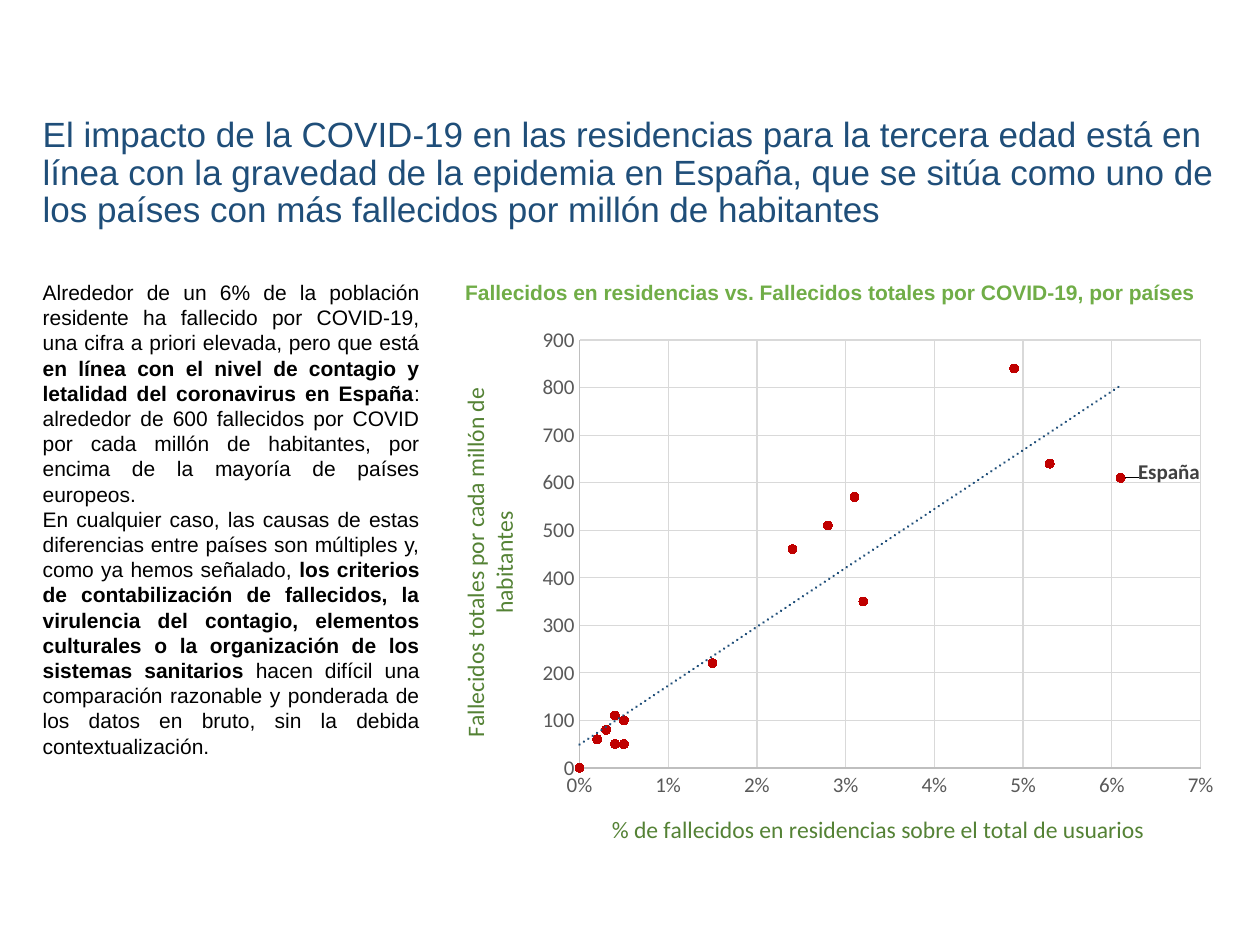
from dataclasses import dataclass

from lxml import etree
from pptx import Presentation
from pptx.chart.data import XyChartData
from pptx.dml.color import RGBColor
from pptx.enum.chart import XL_CHART_TYPE as ChartType
from pptx.enum.chart import XL_LABEL_POSITION as LabelPosition
from pptx.enum.chart import XL_MARKER_STYLE as MarkerStyle
from pptx.enum.chart import XL_TICK_MARK as TickMark
from pptx.enum.text import MSO_ANCHOR as Anchor
from pptx.enum.text import PP_ALIGN as Align
from pptx.oxml import parse_xml
from pptx.oxml.ns import nsdecls, qn
from pptx.util import Inches, Pt


@dataclass(frozen=True)
class Theme:
    navy: str = "1F4E79"
    black: str = "000000"
    heading_green: str = "70AD47"
    axis_green: str = "548235"
    tick_gray: str = "595959"
    label_gray: str = "404040"
    axis_line: str = "BFBFBF"
    grid_line: str = "D9D9D9"
    marker_red: str = "C00000"
    text_font: str = "Arial"
    chart_font: str = "Calibri"
    title_size: float = 20
    body_size: float = 12
    axis_title_size: float = 13.5


THEME = Theme()

HEADLINE = (
    "El impacto de la COVID-19 en las residencias para la tercera edad está en "
    "línea con la gravedad de la epidemia en España, que se sitúa como uno de "
    "los países con más fallecidos por millón de habitantes"
)
# Each paragraph is a list of (text, bold) runs
COMMENTARY = [
    [
        ("Alrededor de un 6% de la población residente ha fallecido por COVID-19, "
         "una cifra a priori elevada, pero que está ", False),
        ("en línea con el nivel de contagio y letalidad del coronavirus en España", True),
        (": alrededor de 600 fallecidos por COVID por cada millón de habitantes, "
         "por encima de la mayoría de países europeos.", False),
    ],
    [
        ("En cualquier caso, las causas de estas diferencias entre países son "
         "múltiples y, como ya hemos señalado, ", False),
        ("los criterios de contabilización de fallecidos, la virulencia del contagio, "
         "elementos culturales o la organización de los sistemas sanitarios ", True),
        ("hacen difícil una comparación razonable y ponderada de los datos en bruto, "
         "sin la debida contextualización.", False),
    ],
]
CHART_HEADING = "Fallecidos en residencias vs. Fallecidos totales por COVID-19, por países"
# (share of care-home users who died, total deaths per million)
COUNTRIES = [
    (0, 0), (0.002, 60), (0.003, 80), (0.004, 110), (0.004, 50),
    (0.005, 100), (0.005, 50), (0.015, 220), (0.024, 460), (0.028, 510),
    (0.031, 570), (0.032, 350), (0.049, 840), (0.053, 640), (0.061, 610),
]
SPAIN = len(COUNTRIES) - 1


def style_font(font, size, color, name, bold=False):
    for attribute, value in dict(size=Pt(size), name=name, bold=bold).items():
        setattr(font, attribute, value)
    font.color.rgb = RGBColor.from_string(color)


def style_line(line, color, width=0.75):
    line.color.rgb = RGBColor.from_string(color)
    line.width = Pt(width)


def add_text(slide, box, paragraphs, size, color, align, anchor=Anchor.TOP, spacing=1.0):
    frame = slide.shapes.add_textbox(*map(Inches, box)).text_frame
    for attribute, value in dict(word_wrap=True, vertical_anchor=anchor).items():
        setattr(frame, attribute, value)
    for index, runs in enumerate(paragraphs):
        paragraph = frame.add_paragraph() if index else frame.paragraphs[0]
        for attribute, value in dict(alignment=align, line_spacing=spacing).items():
            setattr(paragraph, attribute, value)
        for text, bold in runs:
            run = paragraph.add_run()
            run.text = text
            style_font(run.font, size, color, THEME.text_font, bold)


def manual_layout(**places):
    layout = etree.Element(qn("c:layout"))
    manual = etree.SubElement(layout, qn("c:manualLayout"))
    for tag, value in places.items():
        etree.SubElement(manual, qn(f"c:{tag}")).set("val", str(value))
    return layout


def style_axis(axis, title, maximum, step, number_format):
    scale = dict(minimum_scale=0, maximum_scale=maximum, major_unit=step,
                 major_tick_mark=TickMark.NONE, minor_tick_mark=TickMark.NONE,
                 has_major_gridlines=True, has_title=True)
    for attribute, value in scale.items():
        setattr(axis, attribute, value)
    labels = axis.tick_labels
    for attribute, value in dict(number_format=number_format,
                                 number_format_is_linked=False).items():
        setattr(labels, attribute, value)
    style_font(labels.font, THEME.body_size, THEME.tick_gray, THEME.chart_font)
    style_line(axis.format.line, THEME.axis_line)
    style_line(axis.major_gridlines.format.line, THEME.grid_line)
    run = axis.axis_title.text_frame.paragraphs[0].add_run()
    run.text = title
    style_font(run.font, THEME.axis_title_size, THEME.axis_green, THEME.chart_font)


def add_trendline(series_xml):
    trendline = parse_xml(
        f'<c:trendline {nsdecls("c", "a")}><c:spPr><a:ln w="{Pt(1.5)}" cap="rnd">'
        f'<a:solidFill><a:srgbClr val="{THEME.navy}"/></a:solidFill>'
        '<a:prstDash val="sysDot"/></a:ln></c:spPr><c:trendlineType val="linear"/>'
        '<c:dispRSqr val="0"/><c:dispEq val="0"/></c:trendline>'
    )
    series_xml.find(qn("c:xVal")).addprevious(trendline)


def label_spain(point):
    label = point.data_label
    run = label.text_frame.paragraphs[0].add_run()
    run.text = "España"
    style_font(run.font, THEME.body_size, THEME.label_gray, THEME.chart_font, True)
    label.position = LabelPosition.RIGHT


def add_scatter(slide, box):
    data = XyChartData()
    deaths = data.add_series("Fallecidos")
    for share, per_million in COUNTRIES:
        deaths.add_data_point(share, per_million)
    chart = slide.shapes.add_chart(ChartType.XY_SCATTER, *map(Inches, box), data).chart
    for attribute, value in dict(has_legend=False, has_title=False).items():
        setattr(chart, attribute, value)
    style_font(chart.font, 10, THEME.black, THEME.chart_font)
    style_axis(chart.category_axis,
               "% de fallecidos en residencias sobre el total de usuarios", 0.07, 0.01, "0%")
    style_axis(chart.value_axis,
               "Fallecidos totales por cada millón de habitantes", 900, 100, "0")

    # Markers without a joining line
    plot = chart.plots[0]
    plot.vary_by_categories = False
    series = plot.series[0]
    series.format.line.fill.background()
    marker = series.marker
    for attribute, value in dict(style=MarkerStyle.CIRCLE, size=5).items():
        setattr(marker, attribute, value)
    marker.format.fill.solid()
    marker.format.fill.fore_color.rgb = RGBColor.from_string(THEME.marker_red)
    style_line(marker.format.line, THEME.marker_red)

    # Highlighted country and trend
    label_spain(series.points[SPAIN])
    series_xml = series._element
    label_index = series_xml.find(f'{qn("c:dLbls")}/{qn("c:dLbl")}/{qn("c:idx")}')
    label_index.addnext(manual_layout(x=0.01, y=-0.01))
    add_trendline(series_xml)

    # Fixed plot area
    plot_area = chart._chartSpace.find(f'{qn("c:chart")}/{qn("c:plotArea")}')
    for layout in plot_area.findall(qn("c:layout")):
        plot_area.remove(layout)
    plot_area.insert(0, manual_layout(layoutTarget="inner", xMode="edge", yMode="edge",
                                      x=0.185, y=0.043, w=0.78, h=0.77))


def add_chart_panel(slide, left, top, width, height):
    heading_height = 0.34
    add_scatter(slide, (left, top + heading_height, width, height - heading_height))
    add_text(slide, (left, top, width, 0.3), [[(CHART_HEADING, True)]],
             THEME.body_size, THEME.heading_green, Align.CENTER)


def main():
    deck = Presentation()
    for attribute, value in dict(slide_width=Inches(10), slide_height=Inches(7.5)).items():
        setattr(deck, attribute, value)
    slide = deck.slides.add_slide(deck.slide_layouts[6])
    left, top, text_width, chart_width = 0.24, 2.17, 3.19, 6.32

    # Headline, commentary and chart
    add_text(slide, (left, 0.58, text_width + chart_width, 1.6), [[(HEADLINE, False)]],
             THEME.title_size, THEME.navy, Align.LEFT, Anchor.MIDDLE, 0.9)
    add_text(slide, (left, top, text_width, 3.94), COMMENTARY,
             THEME.body_size, THEME.black, Align.JUSTIFY)
    add_chart_panel(slide, left + text_width, top, chart_width, 4.75)
    deck.save("out.pptx")


if __name__ == "__main__":
    main()
